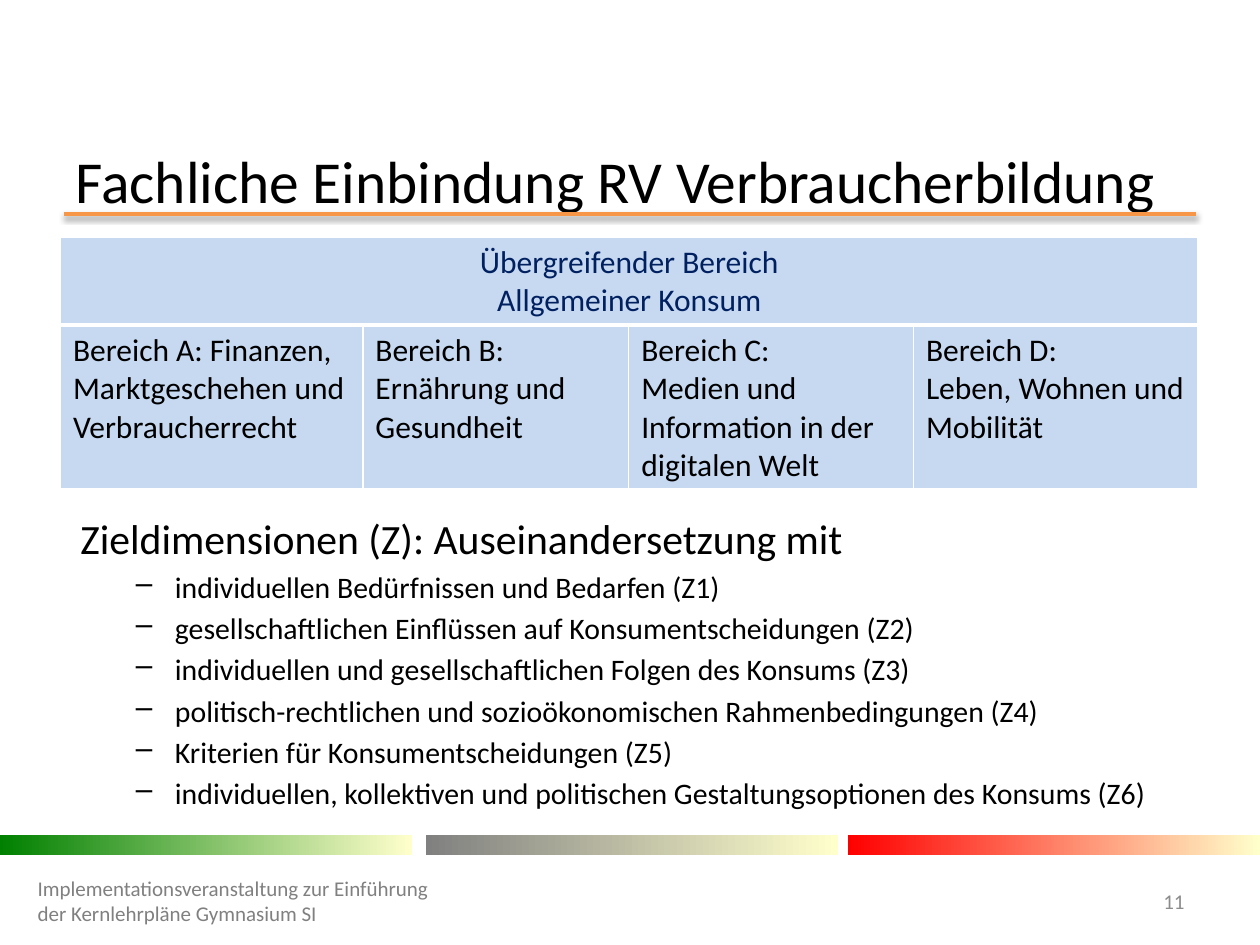
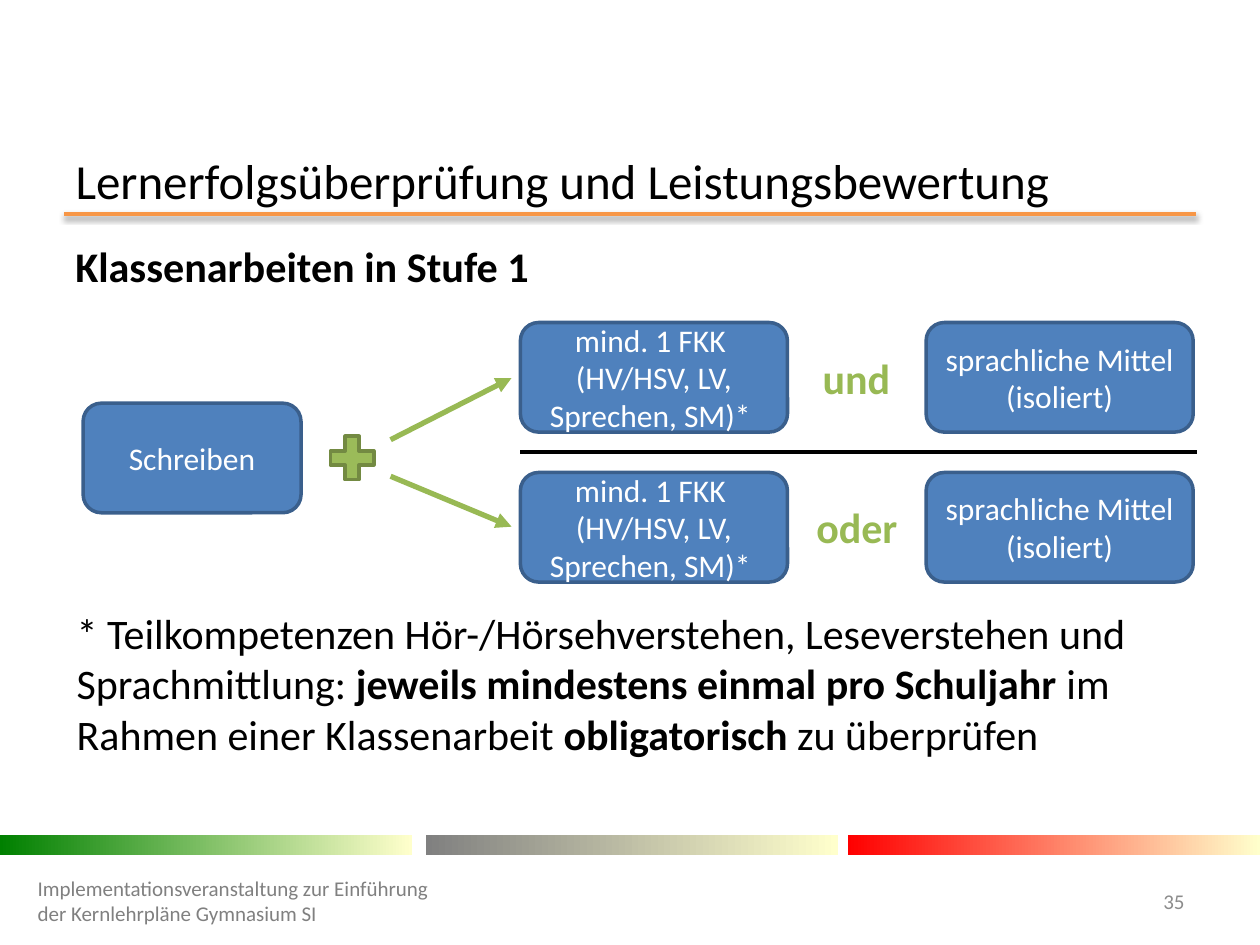
import pptx
import pptx.util
import pptx.dml.color
import pptx.enum.shapes
import pptx.enum.text
import pptx.oxml
from pptx.oxml.ns import nsdecls, qn
from lxml import etree

Inches = pptx.util.Inches
Pt = pptx.util.Pt
SHAPE = pptx.enum.shapes.MSO_SHAPE
LINE = pptx.enum.shapes.MSO_CONNECTOR.STRAIGHT
ALIGN = pptx.enum.text.PP_ALIGN
MIDDLE = pptx.enum.text.MSO_ANCHOR.MIDDLE
TOP = pptx.enum.text.MSO_ANCHOR.TOP

BLACK, WHITE, CREAM = "000000", "FFFFFF", "FFFFCC"
BLUE, EDGE, PALE, NAVY = "4F81BD", "3A5F8C", "C6D9F1", "002060"
GREEN, MOSS, LIME = "9BBB59", "738A42", "98B954"
ORANGE, GREY, SILVER = "F79646", "808080", "8C8C8C"


def hue(code):
    return pptx.dml.color.RGBColor.from_string(code)


def write(par, text, size, code, bold=False):
    for i, part in enumerate(text.split("\n")):
        if i:
            par.add_line_break()
        run = par.add_run()
        run.text = part
        run.font.name = "Calibri"
        run.font.size = Pt(size)
        run.font.bold = bold
        run.font.color.rgb = hue(code)


deck = pptx.Presentation()
deck.slide_width, deck.slide_height = Inches(10), Inches(7.5)

# Shared frame: title, rule, colour bands, footer
heads = [
    ("Fachliche Einbindung RV Verbraucherbildung", 34, "11"),
    ("Lernerfolgsüberprüfung und Leistungsbewertung", 28, "35"),
]
bands = [(0, "008000"), (3.38, GREY), (6.73, "FF0000")]
footer = "Implementationsveranstaltung zur Einführung der Kernlehrpläne Gymnasium SI"

for head, size, page in heads:
    slide = deck.slides.add_slide(deck.slide_layouts[5])
    title = slide.shapes.title
    title.left, title.top = Inches(0.5), Inches(1.23)
    title.width, title.height = Inches(9), Inches(0.39)
    title.text_frame.auto_size = pptx.enum.text.MSO_AUTO_SIZE.NONE
    title.text_frame.vertical_anchor = MIDDLE
    par = title.text_frame.paragraphs[0]
    par.alignment = ALIGN.LEFT
    write(par, head, size, BLACK)

    rule = slide.shapes.add_connector(LINE, Inches(0.51), Inches(1.7), Inches(9.49), Inches(1.7))
    rule.line.color.rgb = hue(ORANGE)
    rule.line.width = Pt(2)
    rule._element.spPr.append(pptx.oxml.parse_xml(
        f'<a:effectLst {nsdecls("a")}><a:outerShdw blurRad="40000" dist="20000" dir="5400000" '
        'rotWithShape="0"><a:srgbClr val="000000"><a:alpha val="38000"/></a:srgbClr>'
        '</a:outerShdw></a:effectLst>'))

    for x, code in bands:
        band = slide.shapes.add_shape(SHAPE.RECTANGLE, Inches(x), Inches(6.63), Inches(3.27), Inches(0.16))
        band.shadow.inherit = False
        band.line.fill.background()
        band.fill.gradient()
        band.fill.gradient_angle = 0
        for stop, tone in zip(band.fill.gradient_stops, (code, CREAM)):
            stop.color.rgb = hue(tone)

    for x, w, text, code, align in [(0.2, 3.31, footer, GREY, ALIGN.LEFT),
                                    (8.86, 0.64, page, SILVER, ALIGN.RIGHT)]:
        box = slide.shapes.add_textbox(Inches(x), Inches(6.95), Inches(w), Inches(0.4))
        box.text_frame.word_wrap = True
        box.text_frame.vertical_anchor = MIDDLE
        par = box.text_frame.paragraphs[0]
        par.alignment = align
        write(par, text, 12, code)

areas, tests = deck.slides

# Running text of both slides: place, size, runs with their weight
notes = [
    (areas, 0.54, 4.02, 8.94, 2.57, 23.8, [("Zieldimensionen (Z): Auseinandersetzung mit", False)]),
    (tests, 0.5, 1.86, 9, 0.48, 24.1, [("Klassenarbeiten in Stufe 1", True)]),
    (tests, 0.51, 4.77, 8.99, 1.31, 24, [
        ("* Teilkompetenzen Hör-/Hörsehverstehen, Leseverstehen und Sprachmittlung: ", False),
        ("jeweils mindestens einmal pro Schuljahr ", True),
        ("im Rahmen einer Klassenarbeit ", False),
        ("obligatorisch", True),
        (" zu überprüfen", False)]),
]
frames = []
for slide, x, y, w, h, size, runs in notes:
    box = slide.shapes.add_textbox(Inches(x), Inches(y), Inches(w), Inches(h))
    box.text_frame.word_wrap = True
    box.text_frame.vertical_anchor = TOP
    for text, bold in runs:
        write(box.text_frame.paragraphs[0], text, size, BLACK, bold)
    frames.append(box.text_frame)

# Slide 1: list of goals
goals = [
    "individuellen Bedürfnissen und Bedarfen",
    "gesellschaftlichen Einflüssen auf Konsumentscheidungen",
    "individuellen und gesellschaftlichen Folgen des Konsums",
    "politisch-rechtlichen und sozioökonomischen Rahmenbedingungen",
    "Kriterien für Konsumentscheidungen",
    "individuellen, kollektiven und politischen Gestaltungsoptionen des Konsums",
]
for i, goal in enumerate(goals, 1):
    par = frames[0].add_paragraph()
    props = par._p.get_or_add_pPr()
    props.set("marL", str(Inches(0.75)))
    props.set("indent", str(Inches(-0.31)))
    etree.SubElement(props, qn("a:buChar")).set("char", "–")
    par.space_before = Pt(3.2)
    write(par, f"{goal} (Z{i})", 17, BLACK)

# Slide 1: table of areas
rows = [
    [["Übergreifender Bereich", "Allgemeiner Konsum"], [], [], []],
    [["Bereich A: Finanzen, Marktgeschehen und Verbraucherrecht"],
     ["Bereich B: Ernährung und Gesundheit"],
     ["Bereich C:", "Medien und \nInformation in der digitalen Welt"],
     ["Bereich D:", "Leben, Wohnen und Mobilität"]],
]
table = areas.shapes.add_table(2, 4, Inches(0.48), Inches(1.88), Inches(9.02), Inches(2)).table
table.first_row = table.horz_banding = False
for col, w in zip(table.columns, (2.4, 2.11, 2.26, 2.26)):
    col.width = Inches(w)
for row, h in zip(table.rows, (0.7, 1.3)):
    row.height = Inches(h)
table.cell(0, 0).merge(table.cell(0, 3))

for r, row in enumerate(rows):
    for c, lines in enumerate(row):
        cell = table.cell(r, c)
        props = cell._tc.get_or_add_tcPr()
        thick = "B" if r == 0 else "T"
        for side in "LRTB":
            width = Pt(3 if side == thick else 1)
            props.append(pptx.oxml.parse_xml(
                f'<a:ln{side} {nsdecls("a")} w="{width}"><a:solidFill>'
                f'<a:srgbClr val="{WHITE}"/></a:solidFill></a:ln{side}>'))
        cell.fill.solid()
        cell.fill.fore_color.rgb = hue(PALE)
        for i, line in enumerate(lines):
            par = cell.text_frame.add_paragraph() if i else cell.text_frame.paragraphs[0]
            par.alignment = ALIGN.LEFT if r else ALIGN.CENTER
            write(par, line, 18, BLACK if r else NAVY)

# Slide 2: boxes and plus sign
skill = "mind. 1 FKK \n(HV/HSV, LV, Sprechen, SM)* "
means = "sprachliche Mittel\n(isoliert)"
ROUND = SHAPE.ROUNDED_RECTANGLE
parts = [(ROUND, 0.66, 3.2, 1.73, 0.87, BLUE, EDGE, "Schreiben"),
         (SHAPE.MATH_PLUS, 2.56, 3.4, 0.47, 0.47, GREEN, MOSS, "")]
for y in (2.56, 3.75):
    parts += [(ROUND, 4.13, y, 2.12, 0.87, BLUE, EDGE, skill),
              (ROUND, 7.35, y, 2.12, 0.87, BLUE, EDGE, means)]
for kind, x, y, w, h, code, edge, text in parts:
    part = tests.shapes.add_shape(kind, Inches(x), Inches(y), Inches(w), Inches(h))
    part.shadow.inherit = False
    part.fill.solid()
    part.fill.fore_color.rgb = hue(code)
    part.line.color.rgb = hue(edge)
    part.line.width = Pt(2)
    if text:
        part.text_frame.vertical_anchor = MIDDLE
        par = part.text_frame.paragraphs[0]
        par.alignment = ALIGN.CENTER
        write(par, text, 18, WHITE)

# Slide 2: arrows and dividing line
links = [(3.1, 3.49, 4.06, 3, LIME, 3, True),
         (3.1, 3.78, 4.06, 4.18, LIME, 3, True),
         (4.13, 3.59, 9.5, 3.59, BLACK, 2.25, False)]
for x1, y1, x2, y2, code, width, arrow in links:
    link = tests.shapes.add_connector(LINE, Inches(x1), Inches(y1), Inches(x2), Inches(y2))
    link.line.color.rgb = hue(code)
    link.line.width = Pt(width)
    if arrow:
        etree.SubElement(link.line._get_or_add_ln(), qn("a:tailEnd")).set("type", "triangle")
    etree.SubElement(link._element.spPr, qn("a:effectLst"))

# Slide 2: joining words
for x, y, w, word in [(6.43, 2.75, 0.74, "und"), (6.38, 3.93, 0.85, "oder")]:
    box = tests.shapes.add_textbox(Inches(x), Inches(y), Inches(w), Inches(0.5))
    box.text_frame.word_wrap = False
    write(box.text_frame.paragraphs[0], word, 24, LIME, True)

deck.save("out.pptx")
